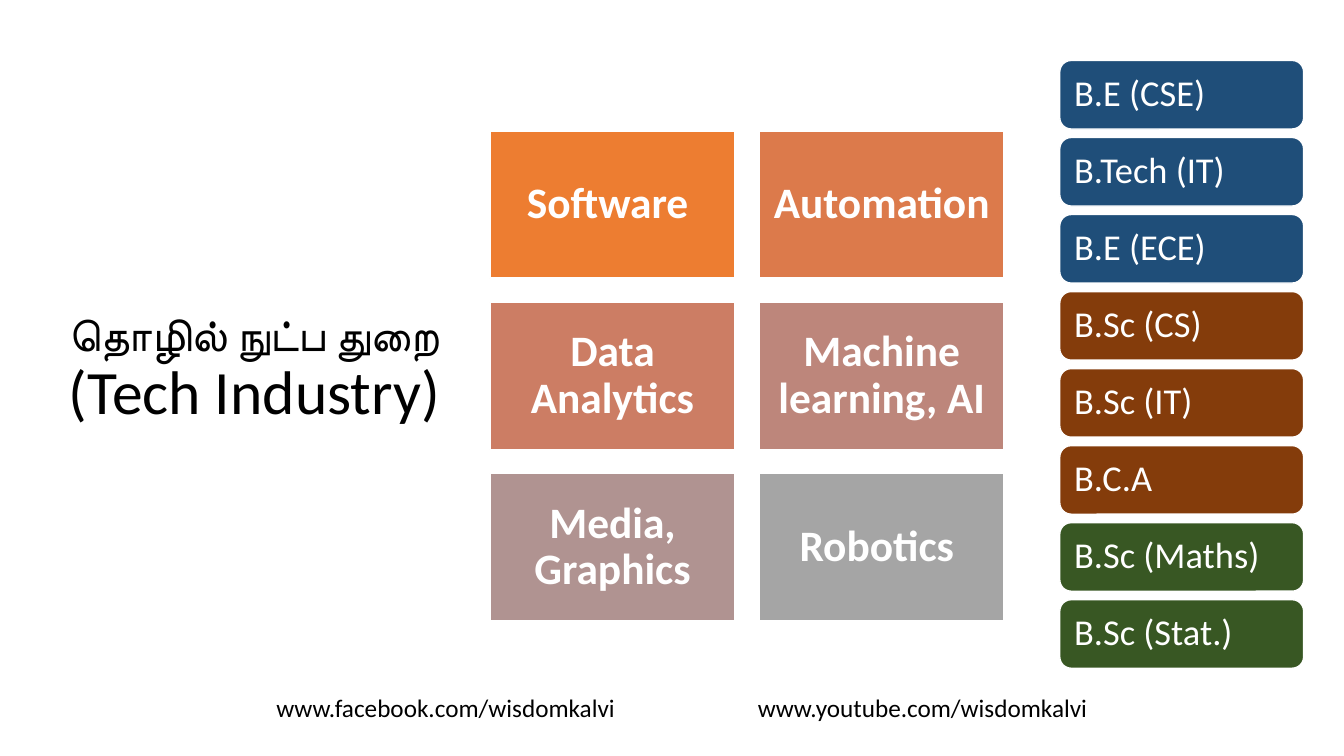
from dataclasses import dataclass

from pptx import Presentation
from pptx import util as u
from pptx.dml.color import RGBColor
from pptx.enum import shapes, text

WIDTH, HEIGHT = u.Inches(13.33), u.Inches(7.5)
COLOURS = {
    "ink": "000000", "paper": "FFFFFF",
    "engineering": "1F4E79", "computing": "843C0B", "mathematics": "385723",
    "software": "ED7D31", "automation": "DC7A4B", "analytics": "CC7D64",
    "learning": "BD867B", "media": "B09391", "robotics": "A5A5A5",
}
FIELDS = [
    ("Software ", "software"), ("Automation", "automation"),
    ("Data Analytics", "analytics"), ("Machine learning, AI", "learning"),
    ("Media, Graphics", "media"), ("Robotics ", "robotics"),
]
COURSES = [
    ("B.E (CSE)", "engineering"), ("B.Tech (IT)", "engineering"),
    ("B.E (ECE)", "engineering"), ("B.Sc (CS)", "computing"),
    ("B.Sc (IT)", "computing"), ("B.C.A", "computing"),
    ("B.Sc (Maths)", "mathematics"), ("B.Sc (Stat.)", "mathematics"),
]
LINKS = ["www.facebook.com/wisdomkalvi", "www.youtube.com/wisdomkalvi"]
TITLE = [("தொழில் நுட்ப துறை", "Roboto", 32), ("(Tech Industry)", "Calibri", 44)]


@dataclass
class Grid:
    """Sizes are percentages of the slide's width and height."""
    left: float
    top: float
    width: float
    height: float
    across: float = 0
    down: float = 0
    columns: int = 1

    def cell(self, index):
        row, column = divmod(index, self.columns)
        return (
            int(WIDTH * (self.left + column * self.across) / 100),
            int(HEIGHT * (self.top + row * self.down) / 100),
            int(WIDTH * self.width / 100),
            int(HEIGHT * self.height / 100),
        )


TITLE_AREA = Grid(1.73, 7.87, 34.43, 82.27)
FIELD_GRID = Grid(36.46, 17.33, 18.23, 19.47, across=20.03, down=22.67, columns=2)
COURSE_GRID = Grid(78.85, 8, 18.15, 9.07, down=10.19)
LINK_GRID = Grid(16.28, 90.93, 33.76, 5.33, across=35.48, columns=2)


def colour(name):
    return RGBColor.from_string(COLOURS[name])


def apply(target, values):
    for name, value in values.items():
        setattr(target, name, value)


def add_span(para, words, ink, size, font="Calibri", bold=False):
    span = para.add_run()
    span.text = words
    apply(span.font, {"name": font, "size": u.Pt(size), "bold": bold})
    span.font.color.rgb = colour(ink)


def prepare_para(box, align, inset=0.1, spacing=1.0):
    frame = box.text_frame
    margins = {f"margin_{side}": u.Inches(inset) for side in ("left", "right")}
    margins |= {f"margin_{side}": u.Inches(0.05) for side in ("top", "bottom")}
    apply(frame, {"word_wrap": True, "vertical_anchor": text.MSO_ANCHOR.MIDDLE, **margins})
    para = frame.paragraphs[0]
    apply(para, {"alignment": align, "line_spacing": spacing})
    return para


def add_tile(page, kind, cell, fill, words, align, inset, size, bold):
    box = page.shapes.add_shape(kind, *cell)
    box.shadow.inherit = False
    box.fill.solid()
    box.fill.fore_color.rgb = colour(fill)
    box.line.color.rgb = colour("paper")
    box.line.width = u.Pt(1)
    para = prepare_para(box, align, inset, 0.9)
    add_span(para, words, "paper", size, bold=bold)


def add_title(page):
    box = page.shapes.add_textbox(*TITLE_AREA.cell(0))
    para = prepare_para(box, text.PP_ALIGN.CENTER, spacing=0.9)
    for index, (words, font, size) in enumerate(TITLE):
        if index:
            para.add_line_break()
        add_span(para, words, "ink", size, font)


def add_link(page, cell, address):
    box = page.shapes.add_textbox(*cell)
    para = prepare_para(box, text.PP_ALIGN.CENTER)
    add_span(para, address, "ink", 18)


def main():
    deck = Presentation()
    apply(deck, {"slide_width": WIDTH, "slide_height": HEIGHT})
    page = deck.slides.add_slide(deck.slide_layouts[6])
    add_title(page)
    for index, (words, fill) in enumerate(COURSES):
        add_tile(page, shapes.MSO_SHAPE.ROUNDED_RECTANGLE, COURSE_GRID.cell(index),
                 fill, words, text.PP_ALIGN.LEFT, 0.11, 26, False)
    for index, (words, fill) in enumerate(FIELDS):
        add_tile(page, shapes.MSO_SHAPE.RECTANGLE, FIELD_GRID.cell(index),
                 fill, words, text.PP_ALIGN.CENTER, 0.13, 31, True)
    for index, address in enumerate(LINKS):
        add_link(page, LINK_GRID.cell(index), address)
    deck.save("out.pptx")


if __name__ == "__main__":
    main()
